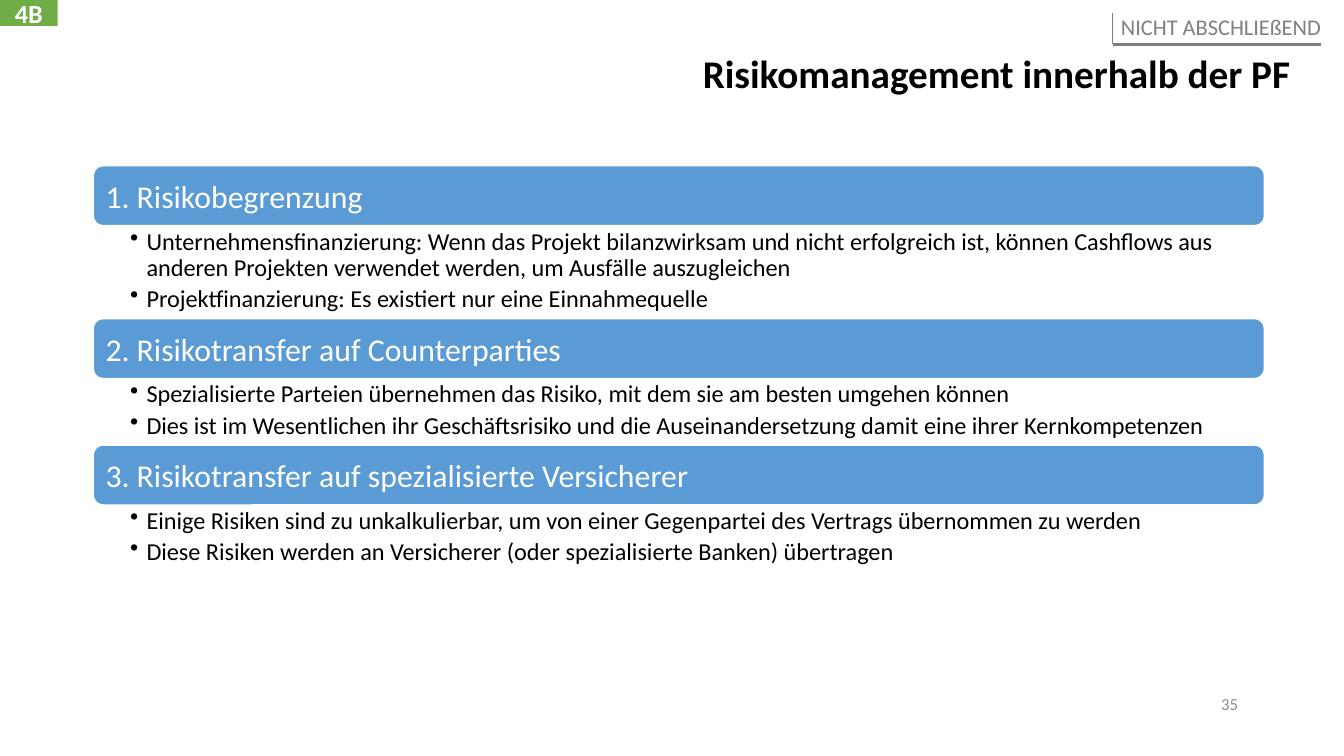
from dataclasses import dataclass

from lxml.etree import SubElement
from pptx import Presentation
from pptx.dml.color import RGBColor
from pptx.enum.shapes import MSO_CONNECTOR, MSO_SHAPE
from pptx.enum.text import MSO_ANCHOR, PP_ALIGN
from pptx.oxml.ns import qn
from pptx.util import Cm, Pt


@dataclass(frozen=True)
class Theme:
    font: str = "Calibri"
    black: str = "000000"
    white: str = "FFFFFF"
    blue: str = "5B9BD5"
    green: str = "70AD47"
    gray: str = "808080"
    light_gray: str = "8C8C8C"
    title_size: float = 21
    heading_size: float = 17
    chapter_size: float = 14
    body_size: float = 13
    tag_size: float = 12
    number_size: float = 9


class SlideBuilder:
    def __init__(self, slide, theme):
        self.shapes = slide.shapes
        self.theme = theme

    def style(self, paragraph, size, color, bold=False, align=PP_ALIGN.LEFT):
        paragraph.alignment = align
        font = paragraph.font
        font.name = self.theme.font
        font.size = Pt(size)
        font.bold = bold
        font.color.rgb = RGBColor.from_string(color)

    def frame(self, shape, insets, anchor, wrap=True):
        frame = shape.text_frame
        frame.word_wrap = wrap
        frame.vertical_anchor = anchor
        (frame.margin_left, frame.margin_top,
         frame.margin_right, frame.margin_bottom) = map(Cm, insets)
        return frame

    def text(self, box, content, size, color, bold=False, insets=(0.25, 0.13, 0.25, 0.13),
             anchor=MSO_ANCHOR.MIDDLE, wrap=True):
        shape = self.shapes.add_textbox(*map(Cm, box))
        frame = self.frame(shape, insets, anchor, wrap)
        frame.text = content
        self.style(frame.paragraphs[0], size, color, bold, PP_ALIGN.RIGHT)

    def panel(self, kind, box, content, fill, size, line=None, bold=False,
              align=PP_ALIGN.LEFT, inset=0.0):
        shape = self.shapes.add_shape(kind, *map(Cm, box))
        shape.shadow.inherit = False
        shape.fill.solid()
        shape.fill.fore_color.rgb = RGBColor.from_string(fill)
        if line:
            shape.line.color.rgb = RGBColor.from_string(line)
            shape.line.width = Pt(1)
        else:
            shape.line.fill.background()
        frame = self.frame(shape, (inset,) * 4, MSO_ANCHOR.MIDDLE)
        frame.text = content
        self.style(frame.paragraphs[0], size, self.theme.white, bold, align)

    def bullets(self, box, items):
        shape = self.shapes.add_textbox(*map(Cm, box))
        frame = self.frame(shape, (0.7, 0.06, 0.33, 0.06), MSO_ANCHOR.TOP)
        for index, item in enumerate(items):
            paragraph = frame.paragraphs[0] if index == 0 else frame.add_paragraph()
            paragraph.text = item
            paragraph.level = 1
            paragraph.line_spacing = 0.9
            paragraph.space_after = Pt(2.6)
            properties = paragraph._p.get_or_add_pPr()
            properties.set("marL", str(Cm(0.31)))
            properties.set("indent", str(Cm(-0.31)))
            SubElement(properties, qn("a:buChar"), char="•")
            self.style(paragraph, self.theme.body_size, self.theme.black)

    def line(self, start, end, color, width):
        connector = self.shapes.add_connector(
            MSO_CONNECTOR.STRAIGHT, *map(Cm, start + end))
        connector.line.color.rgb = RGBColor.from_string(color)
        connector.line.width = Pt(width)
        SubElement(connector._element.spPr, qn("a:effectLst"))


SECTIONS = [
    ("1. Risikobegrenzung", 1.75, [
        "Unternehmensfinanzierung: Wenn das Projekt bilanzwirksam und nicht erfolgreich ist, "
        "können Cashflows aus anderen Projekten verwendet werden, um Ausfälle auszugleichen",
        "Projektfinanzierung: Es existiert nur eine Einnahmequelle",
    ]),
    ("2. Risikotransfer auf Counterparties", 1.25, [
        "Spezialisierte Parteien übernehmen das Risiko, mit dem sie am besten umgehen können",
        "Dies ist im Wesentlichen ihr Geschäftsrisiko und die Auseinandersetzung damit "
        "eine ihrer Kernkompetenzen",
    ]),
    ("3. Risikotransfer auf spezialisierte Versicherer", 1.85, [
        "Einige Risiken sind zu unkalkulierbar, um von einer Gegenpartei des Vertrags "
        "übernommen zu werden",
        "Diese Risiken werden an Versicherer (oder spezialisierte Banken) übertragen",
    ]),
]


def main():
    presentation = Presentation()
    presentation.slide_width = Cm(25.4)
    presentation.slide_height = Cm(14.29)
    theme = Theme()
    builder = SlideBuilder(
        presentation.slides.add_slide(presentation.slide_layouts[6]), theme)

    left, width, heading_height = 1.76, 22.14, 1.14
    top = 3.13
    for heading, body_height, items in SECTIONS:
        builder.panel(MSO_SHAPE.ROUNDED_RECTANGLE, (left, top, width, heading_height),
                      heading, theme.blue, theme.heading_size, line=theme.white, inset=0.18)
        top += heading_height
        builder.bullets((left, top, width, body_height), items)
        top += body_height

    builder.text((2.74, 0.84, 21.9, 1.09), "Risikomanagement innerhalb der PF",
                 theme.title_size, theme.black, bold=True)

    tag_left, tag_top, tag_right, tag_bottom = 21.03, 0.25, 24.97, 0.84
    builder.text((tag_left, tag_top, tag_right - tag_left, tag_bottom - tag_top),
                 "NICHT ABSCHLIEßEND", theme.tag_size, theme.gray,
                 insets=(0.1, 0, 0, 0.08), anchor=MSO_ANCHOR.TOP, wrap=False)
    builder.line((tag_right, tag_bottom), (tag_left, tag_bottom), theme.gray, 1.5)
    builder.line((tag_left, tag_top), (tag_left, tag_bottom), theme.gray, 0.5)

    builder.text((17.93, 12.93, 5.72, 0.76), "35", theme.number_size, theme.light_gray)
    builder.panel(MSO_SHAPE.RECTANGLE, (0, 0, 1.09, 0.49), "4B", theme.green,
                  theme.chapter_size, bold=True, align=PP_ALIGN.CENTER)

    presentation.save("out.pptx")


if __name__ == "__main__":
    main()
